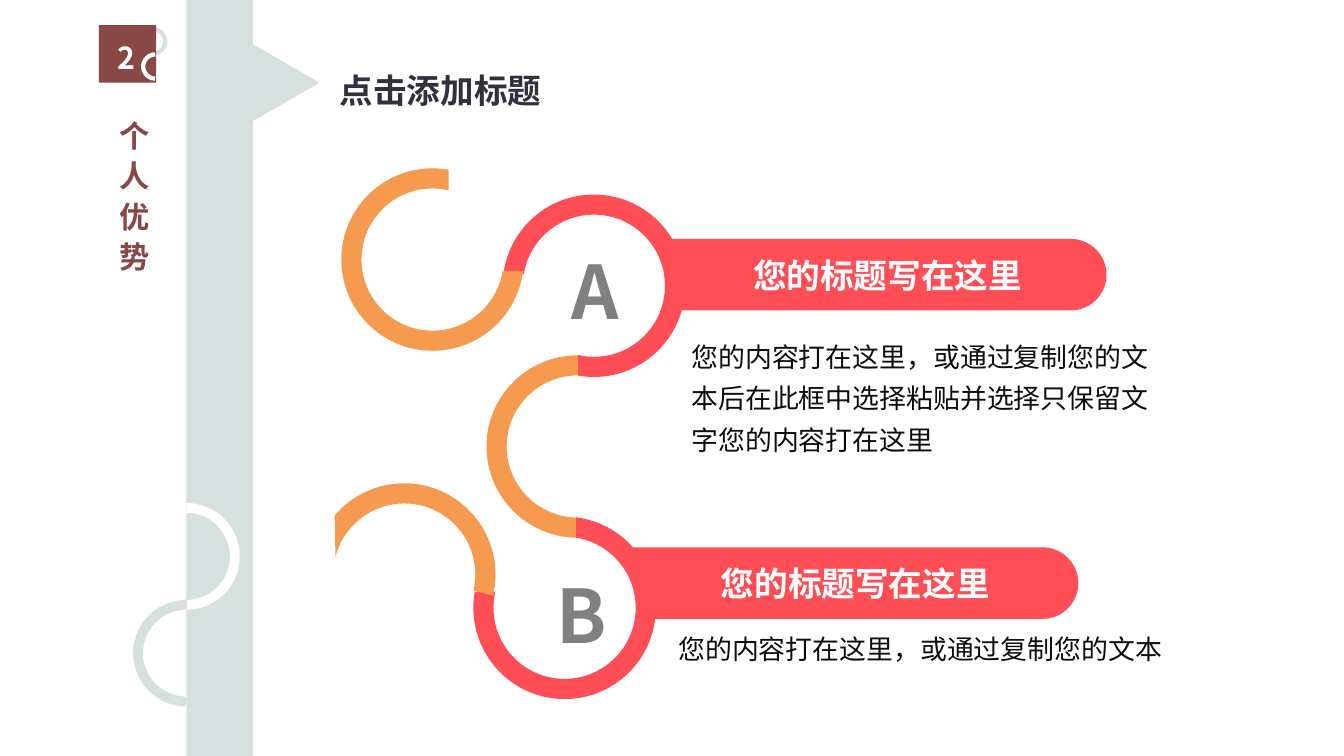
"""Build the slide on personal strengths with two linked ring callouts."""
from itertools import pairwise
from math import cos, radians, sin, tan

from lxml.etree import SubElement
from pptx import Presentation
from pptx.dml.color import RGBColor
from pptx.enum.shapes import MSO_SHAPE
from pptx.enum.text import MSO_ANCHOR, MSO_AUTO_SIZE, PP_ALIGN
from pptx.oxml.ns import qn
from pptx.util import Inches, Pt

FONT = "Noto Sans CJK JP"
RED, ORANGE, PALE, BROWN, WHITE = "FF4E56", "F69A4F", "D6E0DF", "884846", "FFFFFF"
OUTER, INNER, CAP = 0.905, 0.705, 0.355


def paint(target, color):
    target.solid()
    target.fore_color.rgb = RGBColor.from_string(color)


def write(frame, text, size, color, bold=True, spacing=None):
    paragraph = frame.paragraphs[0]
    paragraph.line_spacing = spacing
    run = paragraph.add_run()
    run.text = text
    run.font.size = Pt(size)
    run.font.bold = bold
    run.font.name = FONT
    paint(run.font.fill, color)
    SubElement(run.font._element, qn("a:ea")).set("typeface", FONT)
    return paragraph


deck = Presentation()
deck.slide_width, deck.slide_height = Inches(13.33), Inches(7.5)
shapes = deck.slides.add_slide(deck.slide_layouts[6]).shapes

rings = [
    (5.89, 2.835, 187.3, 460.2, 189.4, 463.1, RED),
    (5.73, 4.43, 90, 270, 90, 270, ORANGE),
    (5.6, 6.03, -82.7, 190.2, -80.6, 193.1, RED),
    (4.29, 2.575, 7.3, 280.2, 9.4, 283.1, ORANGE),
    (4.01, 5.7, 220.3, 373.5, 194.6, 373, ORANGE),
]
bands = [
    ([(x, y, OUTER, outer_from, outer_to), (x, y, INNER, inner_to, inner_from)], color, None)
    for x, y, outer_from, outer_to, inner_from, inner_to, color in rings
]
for top_left, bottom_left, top, cap_x in ((6.63, 6.63, 2.37, 10.62), (6.27, 6.35, 5.43, 10.34)):
    edge = [(top_left, top), (cap_x, top + CAP, CAP, -90, 90), (bottom_left, top + 2 * CAP)]
    bands.append((edge, RED, "您的标题写在这里"))

for edge, color, heading in bands:
    strokes = []
    for x, y, *sweep in edge:
        if not sweep:
            strokes.append([(x, y)])
            continue
        radius, start, end = sweep
        low, high = sorted((start, end))
        quarters = [angle for angle in range(-90, 541, 90) if low < angle < high]
        stops = [low, *quarters, high]
        if start > end:
            stops.reverse()
        strokes.append([(x + radius * cos(radians(start)), y + radius * sin(radians(start)))])
        for first, last in pairwise(stops):
            a, b = radians(first), radians(last)
            reach = 4 / 3 * tan((b - a) / 4)
            strokes.append([
                (x + radius * (cos(a) - reach * sin(a)), y + radius * (sin(a) + reach * cos(a))),
                (x + radius * (cos(b) + reach * sin(b)), y + radius * (sin(b) - reach * cos(b))),
                (x + radius * cos(b), y + radius * sin(b)),
            ])
    corners = [(Inches(x), Inches(y)) for stroke in strokes for x, y in stroke]
    builder = shapes.build_freeform(*corners[0])
    builder.add_line_segments(corners[1:])
    band = builder.convert_to_shape()
    lines = iter(list(band._element.iter(qn("a:lnTo"))))
    for stroke in strokes[1:]:
        parts = [next(lines) for point in stroke]
        if len(parts) == 3:
            outline = parts[0].getparent()
            curve = SubElement(outline, qn("a:cubicBezTo"))
            parts[0].addprevious(curve)
            for part in parts:
                curve.append(part[0])
                outline.remove(part)
    band.shadow.inherit = False
    paint(band.fill, color)
    band.line.fill.background()
    if heading:
        band.text_frame.vertical_anchor = MSO_ANCHOR.MIDDLE
        write(band.text_frame, heading, 24, WHITE).alignment = PP_ALIGN.CENTER

texts = [
    ("A", 5.57, 2.39, 0.67, 0.99, 52.8, "808080", True, None, True),
    ("B", 5.42, 5.6, 0.67, 0.99, 52.8, "808080", True, None, True),
    ("您的内容打在这里，或通过复制您的文本后在此框中选择粘贴并选择只保留文字您的内容打在这里",
     6.76, 3.23, 4.87, 1.32, 19.2, "0D0D0D", False, 1.3, True),
    ("您的内容打在这里，或通过复制您的文本", 6.63, 6.13, 5.23, 0.49, 19.2, "0D0D0D", False, 1.3, True),
    ("点击添加标题", 3.27, 0.44, 2.24, 0.65, 24, "31313B", True, 1.5, False),
    ("个人优势", 0.98, 1.1, 0.57, 1.72, 21.6, BROWN, True, None, False),
    ("2", 1.07, 0.34, 0.38, 0.46, 21.6, WHITE, True, None, False),
]
blocks = [
    (MSO_SHAPE.RECTANGLE, 1.85, 0, 0.66, 7.5, PALE, False),
    (MSO_SHAPE.ISOSCELES_TRIANGLE, 2.46, 0.49, 0.76, 0.66, PALE, False),
    (MSO_SHAPE.ARC, 1.4, 0.29, 0.24, 0.24, PALE, False),
    (MSO_SHAPE.RECTANGLE, 0.98, 0.25, 0.57, 0.57, BROWN, False),
    (MSO_SHAPE.ARC, 1.42, 0.54, 0.24, 0.24, WHITE, True),
    (MSO_SHAPE.ARC, 1.37, 5.04, 0.96, 0.96, WHITE, False),
    (MSO_SHAPE.ARC, 1.37, 6, 0.96, 0.96, PALE, True),
]
for kind, x, y, width, height, color, mirrored in blocks:
    block = shapes.add_shape(kind, Inches(x), Inches(y), Inches(width), Inches(height))
    block.shadow.inherit = False
    if kind == MSO_SHAPE.ARC:
        block.adjustments[0], block.adjustments[1] = 162, 53.59
        block.fill.background()
        paint(block.line.fill, color)
        block.line.width = Pt(7 if width > 0.5 else 3)
    else:
        paint(block.fill, color)
        block.line.fill.background()
    if kind == MSO_SHAPE.ISOSCELES_TRIANGLE:
        block.rotation = 90
    if mirrored:
        block._element.spPr.xfrm.set("flipH", "1")

for text, x, y, width, height, size, color, bold, spacing, wrap in texts:
    frame = shapes.add_textbox(Inches(x), Inches(y), Inches(width), Inches(height)).text_frame
    frame.word_wrap = wrap
    frame.auto_size = MSO_AUTO_SIZE.SHAPE_TO_FIT_TEXT
    paragraph = write(frame, text, size, color, bold, spacing)
    if height > width and color == BROWN:
        frame._txBody.bodyPr.set("vert", "eaVert")
        paragraph.runs[0].font._element.set("spc", "720")

deck.save("out.pptx")
